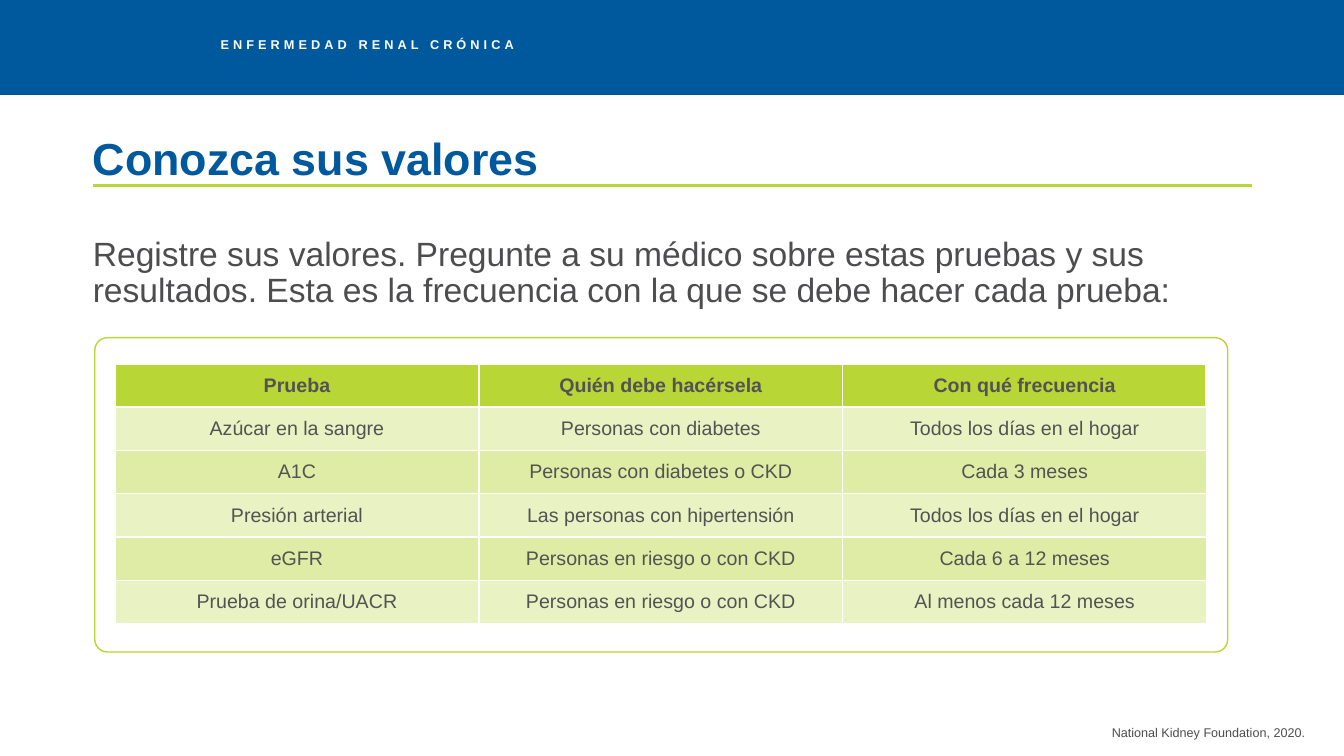
"""Build the slide with the table of kidney health tests and their frequency."""
from lxml.etree import SubElement
from pptx import Presentation
from pptx.dml.color import RGBColor
from pptx.enum.shapes import MSO_CONNECTOR, MSO_SHAPE
from pptx.enum.text import MSO_ANCHOR, PP_ALIGN
from pptx.oxml.ns import qn
from pptx.util import Cm, Pt

SECTION = "ENFERMEDAD RENAL CRÓNICA"
TITLE = "Conozca sus valores"
INTRO = ("Registre sus valores. Pregunte a su médico sobre estas pruebas y sus resultados. "
         "Esta es la frecuencia con la que se debe hacer cada prueba:")
TESTS = [
    ("Prueba", "Quién debe hacérsela", "Con qué frecuencia"),
    ("Azúcar en la sangre", "Personas con diabetes", "Todos los días en el hogar"),
    ("A1C", "Personas con diabetes o CKD", "Cada 3 meses"),
    ("Presión arterial", "Las personas con hipertensión", "Todos los días en el hogar"),
    ("eGFR", "Personas en riesgo o con CKD", "Cada 6 a 12 meses"),
    ("Prueba de orina/UACR", "Personas en riesgo o con CKD", "Al menos cada 12 meses"),
]
SOURCE = "National Kidney Foundation, 2020."

THEME = {
    "font": "Arial",
    "blue": "00599C", "green": "B8D636", "white": "FFFFFF",
    "text": "4D4D4F", "cell": "535353", "bands": ("DEECA5", "E9F2C3"),
    "section": 9.1, "title": 32, "intro": 24, "table": 14, "source": 9,
}
SLIDE_W, SLIDE_H = 33.87, 19.05
LEFT, WIDTH = 2.34, 29.21
RULE_Y = 4.67
COL_W, ROW_H = 9.17, 1.09
INSET = 0.13


def rgb(name):
    return RGBColor.from_string(THEME.get(name, name))


def style(p, size, color, bold=False):
    for r in p.runs:
        r.font.name = THEME["font"]
        r.font.size = Pt(THEME[size])
        r.font.bold = bold
        r.font.color.rgb = rgb(color)


def add_text(s, box, text, size, color, bold=False, anchor=MSO_ANCHOR.TOP,
             align=PP_ALIGN.LEFT, spacing=0.9, inset=0):
    tf = s.shapes.add_textbox(*map(Cm, box)).text_frame
    tf.word_wrap = True
    tf.vertical_anchor = anchor
    tf.margin_left = tf.margin_right = tf.margin_top = tf.margin_bottom = Cm(inset)
    tf.text = text
    p = tf.paragraphs[0]
    p.alignment = align
    p.line_spacing = spacing
    style(p, size, color, bold)
    return p


def add_panel(s, kind, box, fill, line=None):
    sp = s.shapes.add_shape(kind, *map(Cm, box))
    sp.shadow.inherit = False
    sp.fill.solid()
    sp.fill.fore_color.rgb = rgb(fill)
    if line:
        sp.line.color.rgb = rgb(line)
        sp.line.width = Pt(1)
    else:
        sp.line.fill.background()
    return sp


def add_borders(cell, row, col):
    thick = {0: "TB", 1: "T"}.get(row, "")
    if row == 0:
        thick += {0: "L", len(TESTS[0]) - 1: "R"}.get(col, "")
    tcPr = cell._tc.get_or_add_tcPr()
    for side in "LRTB":
        width = Pt(2 if side in thick else 1)
        ln = SubElement(tcPr, qn(f"a:ln{side}"), w=str(width))
        fill = SubElement(ln, qn("a:solidFill"))
        SubElement(fill, qn("a:srgbClr"), val=THEME["white"])


def add_tests(s, left, top):
    rows, cols = len(TESTS), len(TESTS[0])
    table = s.shapes.add_table(rows, cols, Cm(left), Cm(top),
                               Cm(cols * COL_W), Cm(rows * ROW_H)).table
    for column in table.columns:
        column.width = Cm(COL_W)
    for i, values in enumerate(TESTS):
        table.rows[i].height = Cm(ROW_H)
        for j, value in enumerate(values):
            cell = table.cell(i, j)
            add_borders(cell, i, j)
            cell.fill.solid()
            cell.fill.fore_color.rgb = rgb(THEME["bands"][i % 2] if i else "green")
            cell.vertical_anchor = MSO_ANCHOR.MIDDLE
            cell.margin_left = cell.margin_right = Cm(INSET)
            cell.margin_top = cell.margin_bottom = Cm(INSET)
            cell.text = value
            p = cell.text_frame.paragraphs[0]
            p.alignment = PP_ALIGN.CENTER
            style(p, "table", "cell", bold=i == 0)


def main():
    prs = Presentation()
    prs.slide_width, prs.slide_height = Cm(SLIDE_W), Cm(SLIDE_H)
    s = prs.slides.add_slide(prs.slide_layouts[6])

    add_panel(s, MSO_SHAPE.RECTANGLE, (0, 0, SLIDE_W, 2.39), "blue")
    rule = s.shapes.add_connector(MSO_CONNECTOR.STRAIGHT, Cm(LEFT), Cm(RULE_Y),
                                  Cm(LEFT + WIDTH), Cm(RULE_Y))
    rule.line.color.rgb = rgb("green")
    rule.line.width = Pt(2)
    SubElement(rule._element.spPr, qn("a:effectLst"))

    p = add_text(s, (5.56, 0.97, 7.87, 0.61), SECTION, "section", "white", bold=True)
    p.runs[0]._r.get_or_add_rPr().set("spc", "290")
    add_text(s, (LEFT, 2.87, WIDTH, 1.8), TITLE, "title", "blue", bold=True,
             anchor=MSO_ANCHOR.BOTTOM)
    add_text(s, (LEFT, 5.99, WIDTH, 10.36), INTRO, "intro", "text")

    frame = add_panel(s, MSO_SHAPE.ROUNDED_RECTANGLE, (2.39, 8.51, 28.55, 7.92),
                      "white", "green")
    frame.adjustments[0] = 0.04
    add_tests(s, 2.9, 9.17)
    add_text(s, (13.26, 18.14, 19.76, 0.64), SOURCE, "source", "text",
             align=PP_ALIGN.RIGHT, spacing=1.0, inset=INSET)

    prs.save("out.pptx")


if __name__ == "__main__":
    main()
